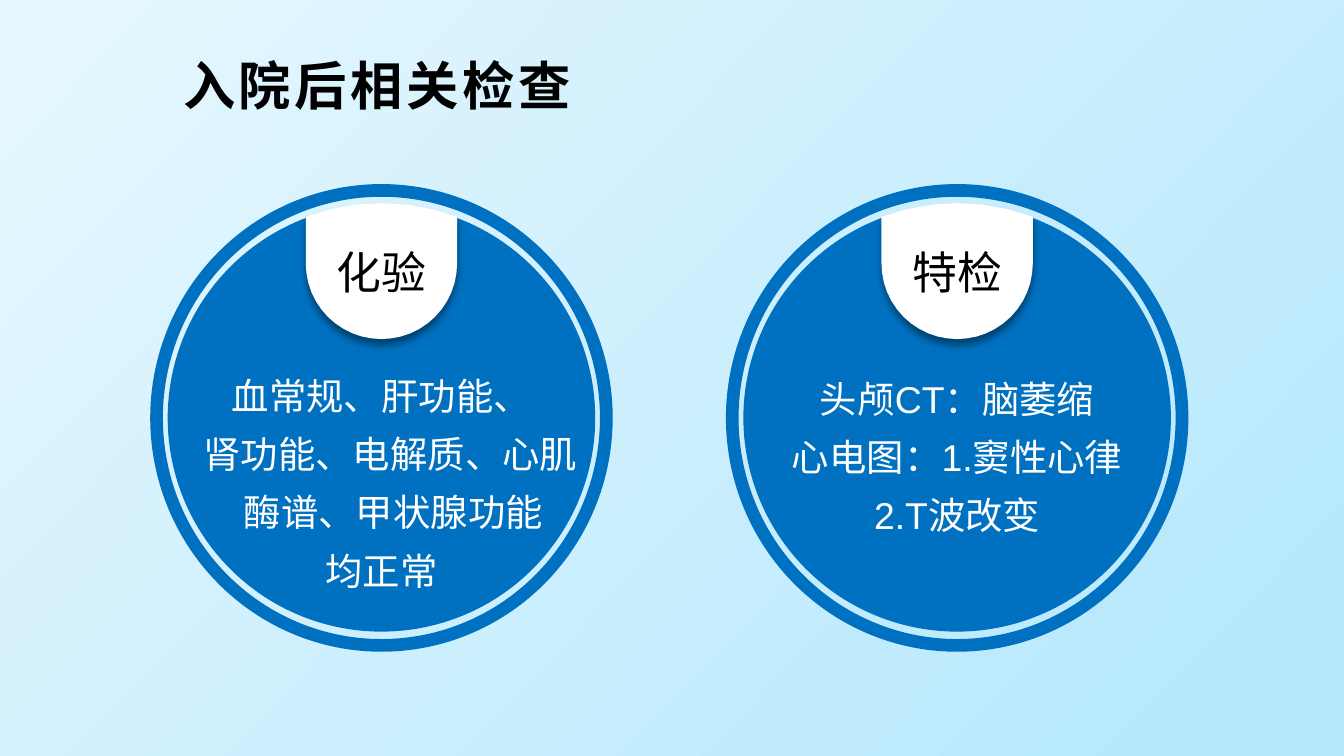
"""Build a slide with two round panels of examination results."""
from math import asin, cos, pi, sin

from lxml import etree
from pptx import Presentation
from pptx.dml.color import RGBColor
from pptx.enum.shapes import MSO_SHAPE
from pptx.enum.text import MSO_ANCHOR, MSO_AUTO_SIZE, PP_ALIGN
from pptx.oxml.ns import qn
from pptx.util import Cm, Pt

OVAL, DONUT = MSO_SHAPE.OVAL, MSO_SHAPE.DONUT
TOP, MIDDLE, BOTTOM = MSO_ANCHOR.TOP, MSO_ANCHOR.MIDDLE, MSO_ANCHOR.BOTTOM
NO_AUTOFIT = MSO_AUTO_SIZE.NONE
LEFT, CENTER = PP_ALIGN.LEFT, PP_ALIGN.CENTER

TITLE = "入院后相关检查"
PANELS = [
    {
        "heading": "化验",
        "center_x": 7.21,
        "findings_bottom": 11.2,
        "findings": [
            ("血常规、肝功能、", 0),
            ("肾功能、电解质、心肌", 0.34),
            ("酶谱、甲状腺功能", 0.45),
            ("均正常", 0),
        ],
    },
    {
        "heading": "特检",
        "center_x": 18.09,
        "findings_bottom": 10.16,
        "findings": [("头颅CT：脑萎缩", 0), ("心电图：1.窦性心律", 0), ("2.T波改变", 0)],
    },
]
COLORS = {
    "sky_light": "E6F7FE",
    "sky": "B7E8FC",
    "panel": "0070C0",
    "tab": "FFFFFF",
    "dark": "000000",
    "light": "FFFFFF",
}
TITLE_FONT, BODY_FONT = "Noto Sans CJK SC", "Arial"
CENTER_Y, DISC_RADIUS, GAP_RADIUS = 7.9, 4.04, 4.13
RING_RADIUS_X, RING_RADIUS_Y = 4.37, 4.42
TAB_RADIUS, TAB_CENTER_Y, TAB_ARC_RADIUS = 1.43, 4.98, 4.06
FINDINGS_HEIGHT = 4.6


def color(name):
    return RGBColor.from_string(COLORS[name])


def arc(center_x, center_y, radius, start, end, steps):
    angles = [start + (end - start) * i / steps for i in range(steps + 1)]
    return [(Cm(center_x + radius * cos(a)), Cm(center_y + radius * sin(a))) for a in angles]


def paint(shape, fill):
    shape.fill.solid()
    shape.fill.fore_color.rgb = color(fill)
    shape.line.fill.background()
    shape.shadow.inherit = False


def add_round(slide, kind, center_x, radius_x, radius_y):
    round_shape = slide.shapes.add_shape(
        kind, Cm(center_x - radius_x), Cm(CENTER_Y - radius_y), Cm(2 * radius_x), Cm(2 * radius_y)
    )
    paint(round_shape, "panel")
    return round_shape


def format_paragraph(paragraph, text, font_name, size, font_color, alignment=CENTER):
    paragraph.text = text
    paragraph.alignment = alignment
    paragraph.font.name = font_name
    paragraph.font.size = Pt(size)
    paragraph.font.color.rgb = color(font_color)


def add_title(slide):
    title = slide.shapes.title
    title.left, title.top, title.width, title.height = Cm(3.18), Cm(0.91), Cm(20.83), Cm(0.91)
    frame = title.text_frame
    frame.auto_size = NO_AUTOFIT
    frame.vertical_anchor = TOP
    frame.margin_left, frame.margin_right = Cm(0.28), Cm(0.2)
    frame.margin_top = frame.margin_bottom = Cm(0.1)
    paragraph = frame.paragraphs[0]
    format_paragraph(paragraph, TITLE, TITLE_FONT, 28, "dark", LEFT)
    paragraph.font.bold = True
    characters = paragraph.runs[0]._r.get_or_add_rPr()
    characters.set("spc", "200")
    etree.SubElement(characters, qn("a:ea"), typeface=TITLE_FONT)


def add_tab(slide, heading, center_x):
    half_angle = asin(TAB_RADIUS / TAB_ARC_RADIUS)
    top_edge = arc(center_x, CENTER_Y, TAB_ARC_RADIUS,
                   -pi / 2 - half_angle, -pi / 2 + half_angle, 6)
    round_end = arc(center_x, TAB_CENTER_Y, TAB_RADIUS, 0, pi, 24)
    outline = top_edge + round_end
    builder = slide.shapes.build_freeform(*outline[0], scale=1.0)
    builder.add_line_segments(outline[1:], close=True)
    tab = builder.convert_to_shape()
    paint(tab, "tab")
    effects = tab._element.spPr.find(qn("a:effectLst"))
    shadow = etree.SubElement(
        effects, qn("a:outerShdw"), blurRad=str(Pt(4)), dist=str(Pt(3)),
        dir="5400000", algn="t", rotWithShape="0",
    )
    shade = etree.SubElement(shadow, qn("a:srgbClr"), val=COLORS["dark"])
    etree.SubElement(shade, qn("a:alpha"), val="40000")
    tab.text_frame.vertical_anchor = MIDDLE
    format_paragraph(tab.text_frame.paragraphs[0], heading, BODY_FONT, 24, "dark")


def add_findings(slide, findings, center_x, bottom):
    box = slide.shapes.add_textbox(
        Cm(center_x - RING_RADIUS_X), Cm(bottom - FINDINGS_HEIGHT),
        Cm(2 * RING_RADIUS_X), Cm(FINDINGS_HEIGHT),
    )
    frame = box.text_frame
    frame.word_wrap = True
    frame.vertical_anchor = BOTTOM
    frame.margin_top = frame.margin_bottom = 0
    for i, (finding, indent) in enumerate(findings):
        paragraph = frame.add_paragraph() if i else frame.paragraphs[0]
        format_paragraph(paragraph, finding, BODY_FONT, 20, "light")
        paragraph.line_spacing = 1.3
        paragraph._p.get_or_add_pPr().set("marL", str(Cm(indent)))


def add_panel(slide, panel):
    center_x = panel["center_x"]
    ring = add_round(slide, DONUT, center_x, RING_RADIUS_X, RING_RADIUS_Y)
    ring.adjustments[0] = (RING_RADIUS_X - GAP_RADIUS) / (2 * RING_RADIUS_X)
    add_round(slide, OVAL, center_x, DISC_RADIUS, DISC_RADIUS)
    add_findings(slide, panel["findings"], center_x, panel["findings_bottom"])
    add_tab(slide, panel["heading"], center_x)


def main():
    deck = Presentation()
    deck.slide_width, deck.slide_height = Cm(25.4), Cm(14.29)
    slide = deck.slides.add_slide(deck.slide_layouts[5])
    sky = slide.background.fill
    sky.gradient()
    sky.gradient_angle = 316
    for stop, name, position in zip(sky.gradient_stops, ("sky_light", "sky"), (0, 0.92)):
        stop.color.rgb = color(name)
        stop.position = position
    add_title(slide)
    for panel in PANELS:
        add_panel(slide, panel)
    deck.save("out.pptx")


if __name__ == "__main__":
    main()
